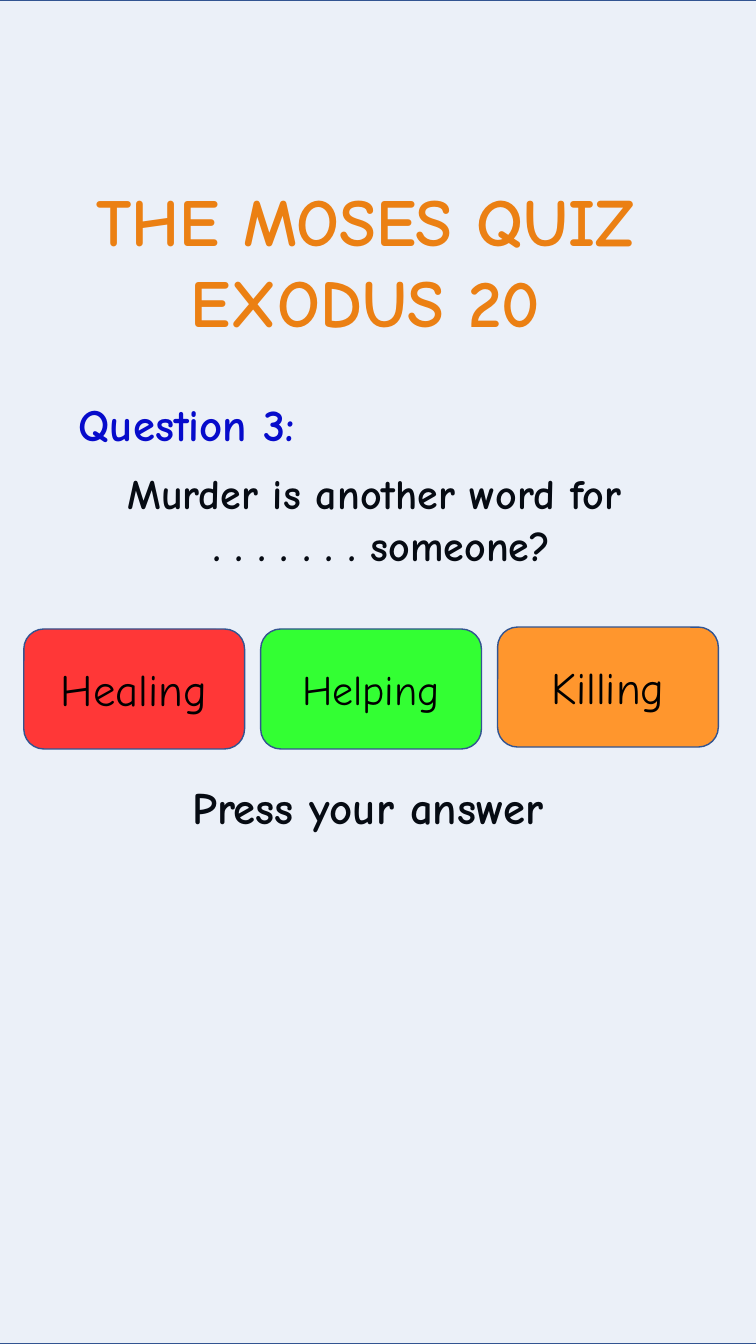
from lxml.etree import SubElement
from pptx import Presentation
from pptx.dml.color import RGBColor
from pptx.enum.shapes import MSO_SHAPE
from pptx.enum.text import MSO_ANCHOR, PP_ALIGN
from pptx.oxml.ns import qn
from pptx.util import Pt

FONT = "Comic Neue"
WIDE, HIGH = 540, 960
EDGE = "325491"


def paint(target, color):
    target.rgb = RGBColor.from_string(color)


def write(frame, lines, size, color, bold=True, align=PP_ALIGN.CENTER,
          space=None, before=0):
    """Fill a text frame with one paragraph per line."""
    for i, line in enumerate(lines):
        para = frame.paragraphs[0] if i == 0 else frame.add_paragraph()
        para.text = line
        para.alignment = align
        para.space_before = Pt(before)
        if space:
            para.line_spacing = space
        para.font.name = FONT
        para.font.size = Pt(size)
        para.font.bold = bold
        paint(para.font.color, color)


def label(slide, box, lines, size, color, wrap=True, **style):
    frame = slide.shapes.add_textbox(*map(Pt, box)).text_frame
    frame.word_wrap = wrap
    write(frame, lines, size, color, **style)


def panel(slide, kind, box, fill):
    shape = slide.shapes.add_shape(kind, *map(Pt, box))
    shape.shadow.inherit = False
    shape.fill.solid()
    paint(shape.fill.fore_color, fill)
    paint(shape.line.color, EDGE)
    shape.line.width = Pt(1)
    return shape


def heading(slide, left, top):
    label(slide, (left, top, 496, 124), ["THE MOSES QUIZ ", "EXODUS 20 "],
          48, "FF8200", wrap=False)


def question(slide, left, top):
    label(slide, (left + 22.3, top, 199.4, 46), ["Question 3:"],
          32, "0000CC", wrap=False)
    label(slide, (left, top + 56.2, 522.7, 100.8),
          ["Murder is another word for ", ". . . . . . . someone?"],
          30, "000000", space=Pt(30), before=7.5)


def prompt(slide, left, top):
    label(slide, (left, top, 303.8, 51.8), ["Press your answer"],
          32, "000000", align=PP_ALIGN.LEFT, space=0.9, before=7.5)


def tint(slide, left, top, width, height):
    """Lay a nearly clear blue sheet over the page."""
    sheet = panel(slide, MSO_SHAPE.RECTANGLE, (left, top, width, height), "4472C4")
    color = sheet.fill._xPr.find(qn("a:solidFill"))[0]
    SubElement(color, qn("a:alpha")).set("val", "10000")


def answers(slide, left, top):
    width, height, step = 157.7, 85.7, 169.2
    choices = [("Healing", "FF3737", 32, 0), ("Helping", "33FF33", 30, 0),
               ("Killing", "FF962D", 32, -1.4)]
    for i, (word, fill, size, shift) in enumerate(choices):
        box = (left + i * step, top + shift, width, height)
        button = panel(slide, MSO_SHAPE.ROUNDED_RECTANGLE, box, fill)
        button.text_frame.vertical_anchor = MSO_ANCHOR.MIDDLE
        write(button.text_frame, [word], size, "000000", bold=False)


def main():
    deck = Presentation()
    deck.slide_width, deck.slide_height = Pt(WIDE), Pt(HIGH)
    slide = deck.slides.add_slide(deck.slide_layouts[6])
    slide.background.fill.solid()
    paint(slide.background.fill.fore_color, "FFFFFF")
    heading(slide, 21.6, 124.6)
    question(slide, 11.5, 280)
    prompt(slide, 130.3, 558)
    tint(slide, -21.6, 0, 574.6, HIGH)
    answers(slide, 17, 449.3)
    deck.save("out.pptx")


if __name__ == "__main__":
    main()
